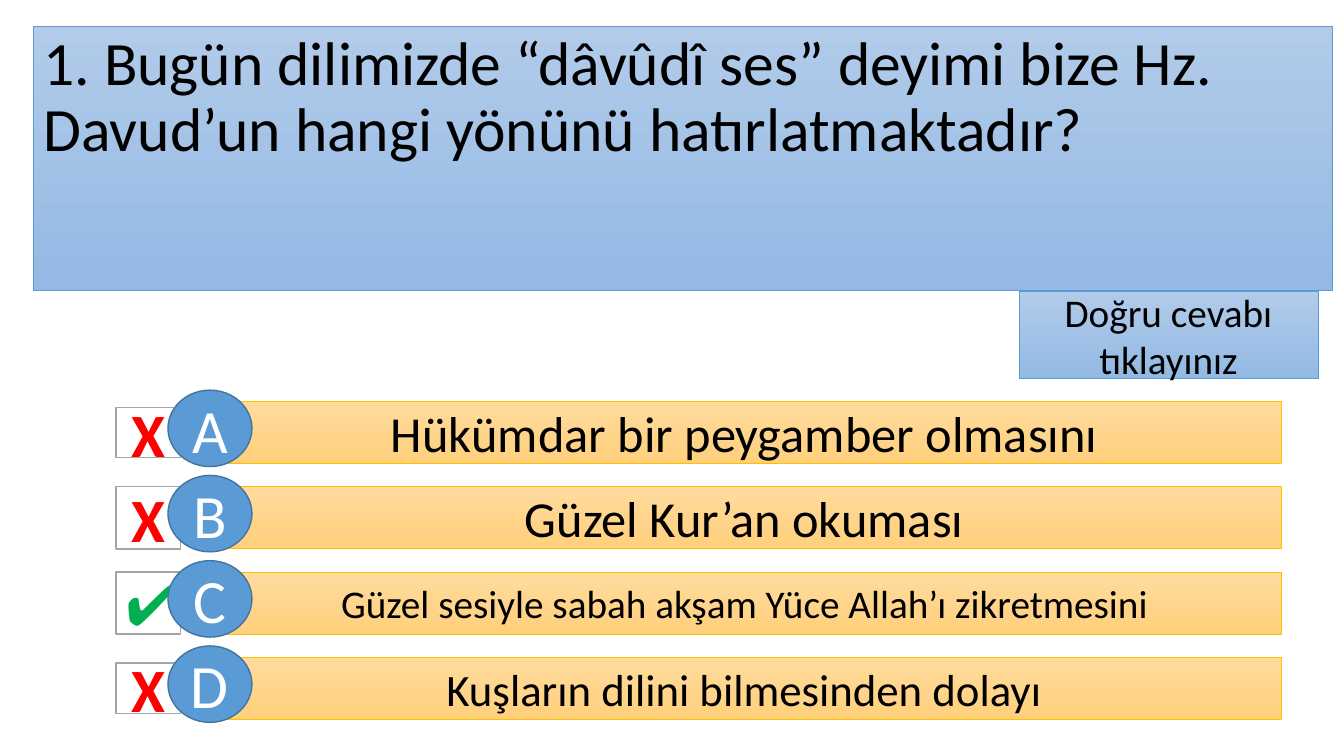
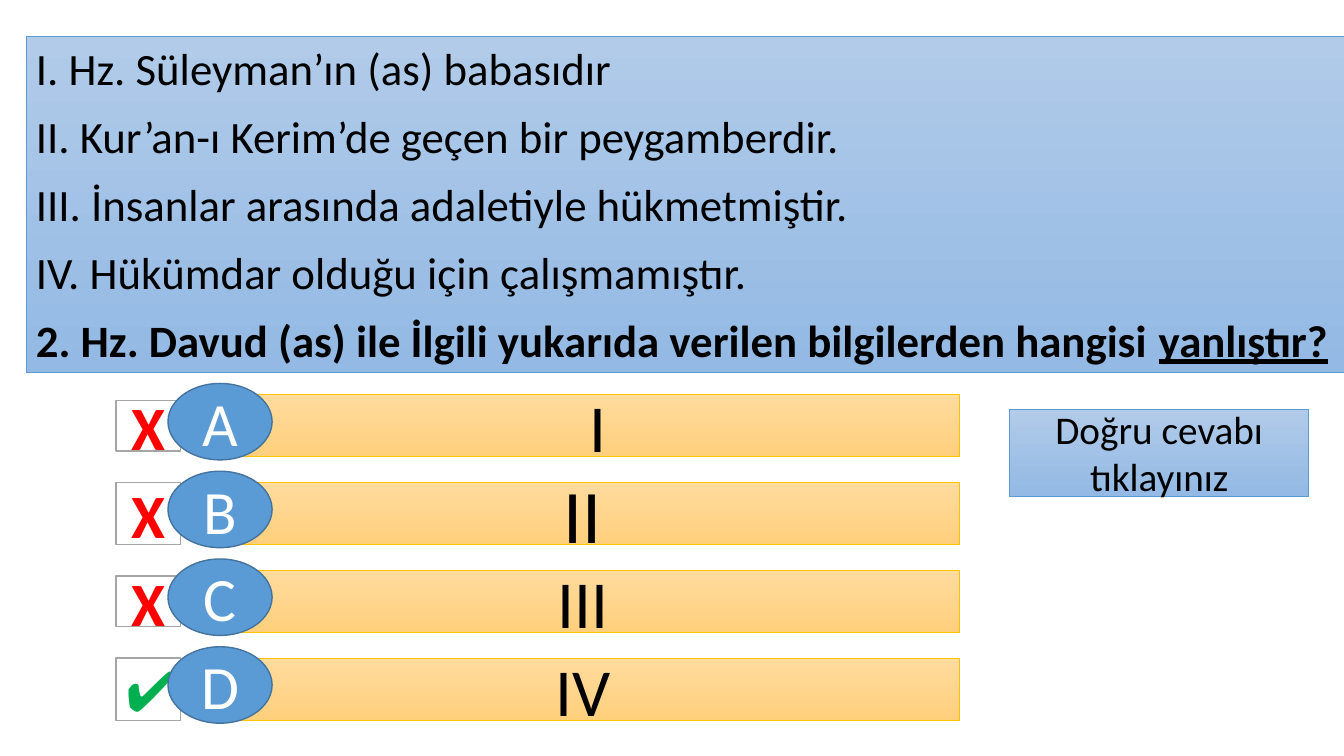
"""Builds two multiple-choice quiz slides about the prophet Davud."""
from pptx import Presentation
from pptx.dml.color import RGBColor
from pptx.enum.shapes import MSO_SHAPE as Shape
from pptx.enum.text import MSO_ANCHOR as Anchor, PP_ALIGN as Align
from pptx.util import Inches, Pt

FONT = "Calibri"
BLACK, WHITE, RED, GREEN = "000000", "FFFFFF", "FF0000", "00B050"
BLUE_PANEL = (["B1CBE9", "93B9E4"], "5B9BD5", 0.5)
ORANGE_BAR = (["FFDB9E", "FFD07C"], "FFC000", 0.5)
MARK_BOX = ([WHITE], "A5A5A5", 1)
BADGE = (["5B9BD5"], "43739E", 1)

deck = Presentation()
deck.slide_width, deck.slide_height = Inches(13.33), Inches(7.5)
COL, ROW = deck.slide_width / 160, deck.slide_height / 90
BAR_LEFT, BAR_HEIGHT = 24.6, 7.4
MARK_LEFT, MARK_WIDTH, SHORT_MARK = 13.8, 7.7, 6
BADGE_LEFT, BADGE_HEIGHT, BADGE_LIFT = 20, 9.1, 1.35


def rgb(value):
    return RGBColor.from_string(value)


def add_box(slide, area, look, paragraphs, size, color=BLACK, bold=False,
            outline=Shape.RECTANGLE, align=Align.CENTER, anchor=Anchor.MIDDLE):
    left, top, width, height = area
    box = slide.shapes.add_shape(outline, round(left * COL), round(top * ROW),
                                 round(width * COL), round(height * ROW))
    box.shadow.inherit = False
    fills, edge, weight = look
    if len(fills) > 1:
        box.fill.gradient()
        box.fill.gradient_angle = 270
        for stop, shade in zip(box.fill.gradient_stops, fills):
            stop.color.rgb = rgb(shade)
    else:
        box.fill.solid()
        box.fill.fore_color.rgb = rgb(fills[0])
    box.line.color.rgb = rgb(edge)
    box.line.width = Pt(weight)
    frame = box.text_frame
    frame.word_wrap = True
    frame.vertical_anchor = anchor
    for number, text in enumerate(paragraphs):
        paragraph = frame.add_paragraph() if number else frame.paragraphs[0]
        paragraph.alignment = align
        paragraph.font.name, paragraph.font.size = FONT, Pt(size)
        paragraph.font.bold = bold
        paragraph.font.color.rgb = rgb(color)
        paragraph.add_run().text = text
    return frame


quizzes = [
    dict(
        question=["1. Bugün dilimizde “dâvûdî ses” deyimi bize Hz. Davud’un hangi yönünü hatırlatmaktadır?"],
        question_area=(4, 3.2, 154.6, 31.4), question_size=44, line_spacing=0.9,
        hint_at=(121.3, 34.7), first_row=47.8, pitch=10.15,
        bar_width=128, badge_width=10, correct="C",
        answers=[("Hükümdar bir peygamber olmasını", 36),
                 ("Güzel Kur’an okuması", 36),
                 ("Güzel sesiyle sabah akşam Yüce Allah’ı zikretmesini", 28),
                 ("Kuşların dilini bilmesinden dolayı", 32)],
    ),
    dict(
        question=["I. Hz. Süleyman’ın (as) babasıdır",
                  "II. Kur’an-ı Kerim’de geçen bir peygamberdir.",
                  "III. İnsanlar arasında adaletiyle hükmetmiştir.",
                  "IV. Hükümdar olduğu için çalışmamıştır.",
                  "2. Hz. Davud (as) ile İlgili yukarıda verilen bilgilerden hangisi "],
        underlined="yanlıştır?",
        question_area=(3.1, 4.3, 156.9, 40), question_size=32, line_spacing=1.0,
        hint_at=(120.2, 48.7), first_row=47, pitch=10.45,
        bar_width=89.6, badge_width=12.4, correct="D",
        answers=[("I", 48), ("II", 54), ("III", 48), ("IV", 48)],
    ),
]

for quiz in quizzes:
    slide = deck.slides.add_slide(deck.slide_layouts[6])
    question = add_box(slide, quiz["question_area"], BLUE_PANEL, quiz["question"],
                       quiz["question_size"], align=Align.LEFT, anchor=Anchor.TOP)
    for paragraph in question.paragraphs:
        paragraph.space_before = Pt(10)
        paragraph.line_spacing = quiz["line_spacing"]
    if "underlined" in quiz:
        stem = question.paragraphs[-1]
        stem.font.bold = True
        key_word = stem.add_run()
        key_word.text = quiz["underlined"]
        key_word.font.underline = True

    for index, (letter, (answer, size)) in enumerate(zip("ABCD", quiz["answers"])):
        top = quiz["first_row"] + index * quiz["pitch"]
        correct = letter == quiz["correct"]
        mark, mark_size, mark_color = ("✔", 40, GREEN) if correct else ("X", 44, RED)
        mark_height = BAR_HEIGHT if correct or letter == "B" else SHORT_MARK
        mark_top = top + (BAR_HEIGHT - mark_height) / 2
        add_box(slide, (MARK_LEFT, mark_top, MARK_WIDTH, mark_height), MARK_BOX,
                [mark], mark_size, mark_color, bold=not correct)
        bar = add_box(slide, (BAR_LEFT, top, quiz["bar_width"], BAR_HEIGHT),
                      ORANGE_BAR, [answer], size)
        if answer == "I":
            bar.margin_left = Inches(0.4)
        add_box(slide, (BADGE_LEFT, top - BADGE_LIFT, quiz["badge_width"], BADGE_HEIGHT),
                BADGE, [letter], 44, WHITE, outline=Shape.OVAL)

    add_box(slide, (*quiz["hint_at"], 35.6, 10.4), BLUE_PANEL,
            ["Doğru cevabı tıklayınız"], 28)

deck.save("out.pptx")
